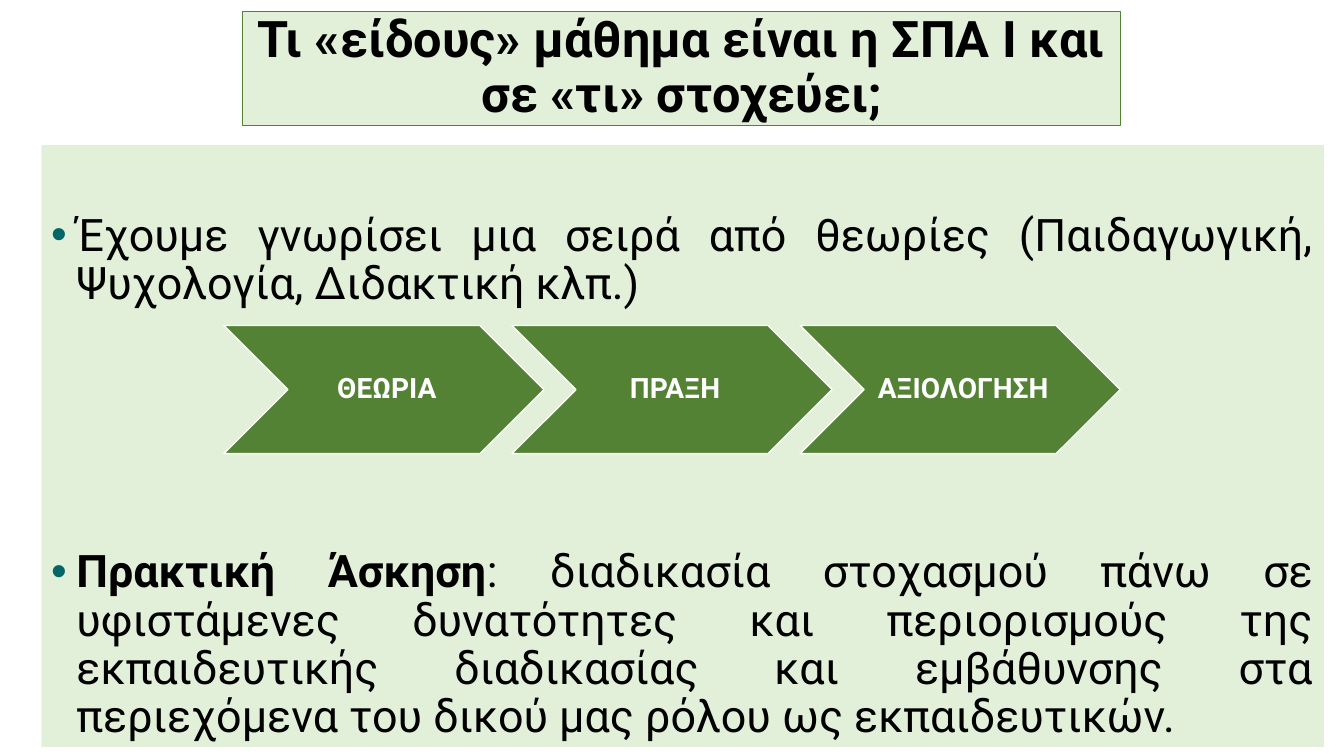
from dataclasses import dataclass

from lxml import etree
from pptx import Presentation
from pptx import util as u
from pptx.dml.color import RGBColor
from pptx.enum import shapes, text
from pptx.oxml.ns import qn


@dataclass(frozen=True)
class Theme:
    """Colours, font and type sizes of the slide."""
    font: str = "Roboto"
    pale: str = "E2F0D9"
    green: str = "548235"
    white: str = "FFFFFF"
    black: str = "000000"
    bullet: str = "006666"
    title_size: int = 36
    body_size: int = 32
    step_size: int = 20


THEME = Theme()
CELL = u.Inches(0.1)
TITLE_BOX = (24.1, 1.1, 87, 11.4)
BODY_BOX = (4.1, 14.4, 127.2, 59.7)
STEPS_BOX = (22.2, 32.3, 88.9, 12.7)
STEPS = ["ΘΕΩΡΙΑ", "ΠΡΑΞΗ", "ΑΞΙΟΛΟΓΗΣΗ"]
BULLETS = [
    [("Έχουμε γνωρίσει μια σειρά από θεωρίες (Παιδαγωγική, "
      "Ψυχολογία, Διδακτική κλπ.)", False)],
    [("Πρακτική Άσκηση", True),
     (": διαδικασία στοχασμού πάνω σε υφιστάμενες δυνατότητες και "
      "περιορισμούς της εκπαιδευτικής διαδικασίας και εμβάθυνσης στα "
      "περιεχόμενα του δικού μας ρόλου ως εκπαιδευτικών.", False)],
]


def add_panel(slide, kind, box, fill, line=None, line_width=1):
    """Add a flat filled shape at a box given in grid columns and rows."""
    shape = slide.shapes.add_shape(kind, *(round(n * CELL) for n in box))
    shape.shadow.inherit = False
    shape.fill.solid()
    shape.fill.fore_color.rgb = RGBColor.from_string(fill)
    if line:
        shape.line.color.rgb = RGBColor.from_string(line)
        shape.line.width = u.Pt(line_width)
    else:
        shape.line.fill.background()
    return shape


def set_frame(shape, anchor, left=0.1, top=0.05, right=0.1, bottom=0.05):
    """Set wrapping, anchor and insets in inches; return the text frame."""
    frame = shape.text_frame
    frame.word_wrap = True
    frame.vertical_anchor = anchor
    frame.margin_left, frame.margin_right = u.Inches(left), u.Inches(right)
    frame.margin_top, frame.margin_bottom = u.Inches(top), u.Inches(bottom)
    return frame


def write(paragraph, runs, size, color, align=text.PP_ALIGN.CENTER, before=0):
    """Fill a paragraph with (words, bold) runs in one format."""
    paragraph.alignment = align
    paragraph.line_spacing = 0.9
    paragraph.space_before = u.Pt(before)
    for words, bold in runs:
        run = paragraph.add_run()
        run.text = words
        run.font.name = THEME.font
        run.font.size = u.Pt(size)
        run.font.bold = bold
        run.font.color.rgb = RGBColor.from_string(color)


def add_bullet(paragraph):
    """Give a paragraph a hanging coloured bullet."""
    properties = paragraph._p.get_or_add_pPr()
    properties.set("marL", str(u.Inches(0.25)))
    properties.set("indent", str(-u.Inches(0.25)))
    color = etree.SubElement(properties, qn("a:buClr"))
    etree.SubElement(color, qn("a:srgbClr"), val=THEME.bullet)
    etree.SubElement(properties, qn("a:buFont"), typeface="Arial")
    etree.SubElement(properties, qn("a:buChar"), char="•")


def draw_title(slide, box):
    """Draw the framed title."""
    shape = add_panel(slide, shapes.MSO_SHAPE.RECTANGLE, box,
                      THEME.pale, THEME.green, 0.75)
    frame = set_frame(shape, text.MSO_ANCHOR.MIDDLE)
    title = "Τι «είδους» μάθημα είναι η ΣΠΑ Ι και σε «τι» στοχεύει;"
    write(frame.paragraphs[0], [(title, True)], THEME.title_size, THEME.black)


def draw_body(slide, box):
    """Draw the panel with bullets above and below the row of steps."""
    shape = add_panel(slide, shapes.MSO_SHAPE.RECTANGLE, box, THEME.pale)
    frame = set_frame(shape, text.MSO_ANCHOR.TOP, top=0.67)
    for index, runs in enumerate(BULLETS):
        paragraph = frame.add_paragraph() if index else frame.paragraphs[0]
        add_bullet(paragraph)
        write(paragraph, runs, THEME.body_size, THEME.black,
              align=text.PP_ALIGN.JUSTIFY, before=171 * index)


def draw_steps(slide, box):
    """Draw the chevrons, each overlapping the next by a tenth of its width."""
    left, top, width, height = box
    step_width = width / (1 + 0.9 * (len(STEPS) - 1))
    for index, label in enumerate(STEPS):
        place = (left + 0.9 * step_width * index, top, step_width, height)
        shape = add_panel(slide, shapes.MSO_SHAPE.CHEVRON, place,
                          THEME.green, THEME.white)
        frame = set_frame(shape, text.MSO_ANCHOR.MIDDLE,
                          0.09, 0.03, 0.03, 0.03)
        write(frame.paragraphs[0], [(label, True)],
              THEME.step_size, THEME.white)


def main():
    """Build and save the presentation."""
    presentation = Presentation()
    presentation.slide_width = u.Inches(13.33)
    presentation.slide_height = u.Inches(7.5)
    slide = presentation.slides.add_slide(presentation.slide_layouts[6])
    draw_title(slide, TITLE_BOX)
    draw_body(slide, BODY_BOX)
    draw_steps(slide, STEPS_BOX)
    presentation.save("out.pptx")


if __name__ == "__main__":
    main()
